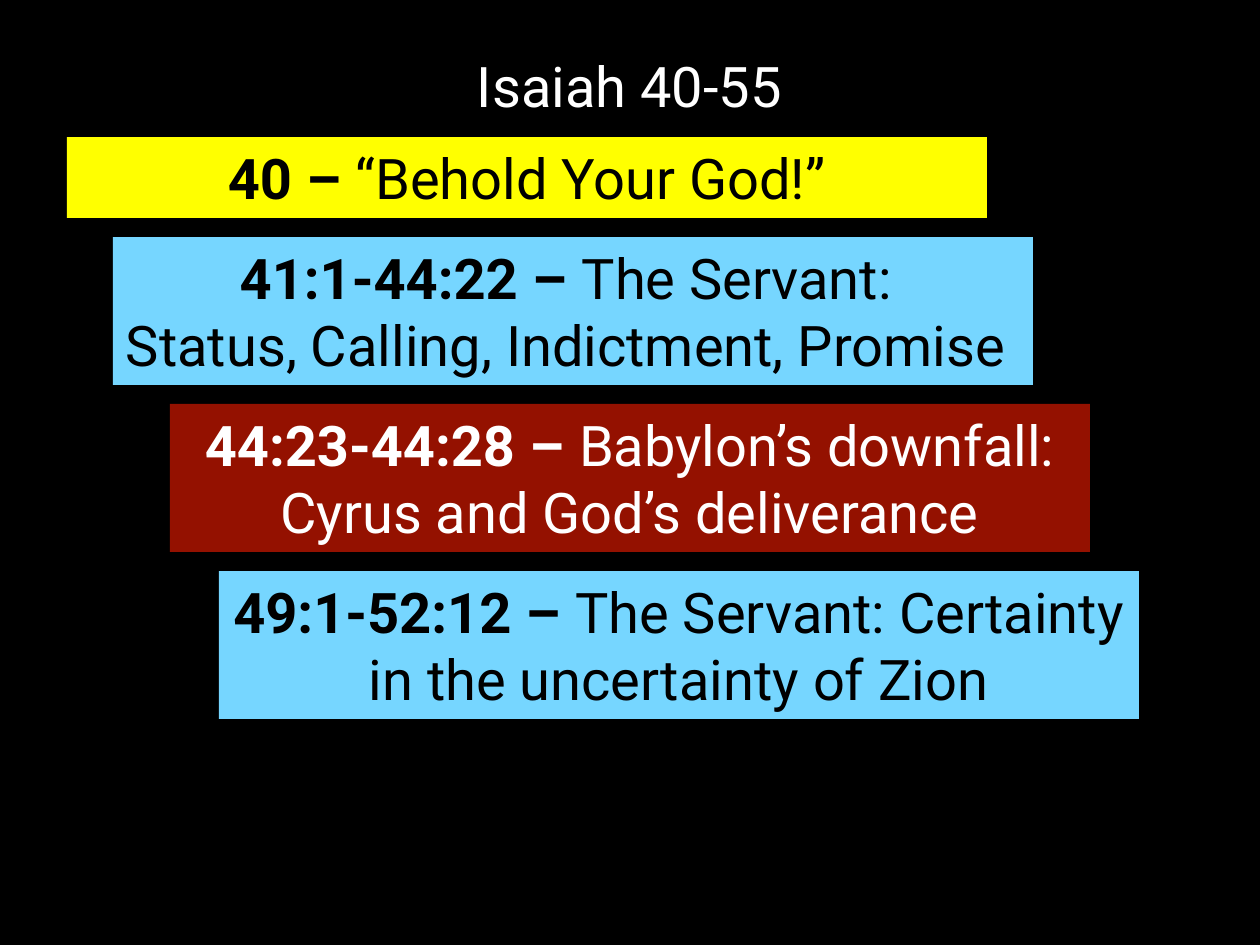
import pptx
import pptx.dml.color
import pptx.enum.shapes
import pptx.enum.text
import pptx.util

RGB = pptx.dml.color.RGBColor
BLACK = RGB(0x00, 0x00, 0x00)
WHITE = RGB(0xFF, 0xFF, 0xFF)
YELLOW = RGB(0xFF, 0xFF, 0x00)
BLUE = RGB(0x76, 0xD6, 0xFF)
RED = RGB(0x94, 0x11, 0x00)

SCALE = 914400 / 126  # EMU in one px
ANCHOR = pptx.enum.text.MSO_ANCHOR
FIT = pptx.enum.text.MSO_AUTO_SIZE


def emu(*sizes):
    return [pptx.util.Emu(round(size * SCALE)) for size in sizes]


class Deck:
    def __init__(self, wide, high):
        self.show = pptx.Presentation()
        self.show.slide_width, self.show.slide_height = emu(wide, high)
        self.font = {"name": "Roboto", "size": pptx.util.Pt(32)}

    def page(self, color):
        self.slide = self.show.slides.add_slide(self.show.slide_layouts[6])
        fill = self.slide.background.fill
        fill.solid()
        fill.fore_color.rgb = color

    def label(self, shape, lines, color, form):
        """Each line is a list of (text, bold) runs."""
        frame = shape.text_frame
        for key, value in form.items():
            setattr(frame, key, value)
        for num, runs in enumerate(lines):
            para = frame.add_paragraph() if num else frame.paragraphs[0]
            para.alignment = pptx.enum.text.PP_ALIGN.CENTER
            for text, bold in runs:
                run = para.add_run()
                run.text = text
                for key, value in {**self.font, "bold": bold}.items():
                    setattr(run.font, key, value)
                run.font.color.rgb = color

    def title(self, box, text, color):
        shape = self.slide.shapes.add_textbox(*emu(*box))
        form = {"word_wrap": True, "vertical_anchor": ANCHOR.MIDDLE}
        self.label(shape, [[(text, False)]], color, form)
        shape.text_frame.paragraphs[0].line_spacing = 0.9

    def bar(self, box, lines, fill, color):
        kind = pptx.enum.shapes.MSO_SHAPE.RECTANGLE
        shape = self.slide.shapes.add_shape(kind, *emu(*box))
        shape.shadow.inherit = False
        shape.fill.solid()
        shape.fill.fore_color.rgb = fill
        shape.line.fill.background()
        form = {"word_wrap": True, "vertical_anchor": ANCHOR.TOP,
                "auto_size": FIT.SHAPE_TO_FIT_TEXT}
        self.label(shape, lines, color, form)


# Left edge, height, fill, text colour, verses, lines of the theme
BARS = [
    (67, 81, YELLOW, BLACK, "40 – ", ["“Behold Your God!”"]),
    (113, 148, BLUE, BLACK, "41:1-44:22 – ",
     ["The Servant: ", "Status, Calling, Indictment, Promise "]),
    (170, 148, RED, WHITE, "44:23-44:28 – ",
     ["Babylon’s downfall: Cyrus and God’s deliverance"]),
    (219, 148, BLUE, BLACK, "49:1-52:12 – ",
     ["The Servant: Certainty in the uncertainty of Zion"]),
]
TOP, WIDTH, GAP = 137, 920, 19


def main():
    deck = Deck(1260, 945)
    deck.page(BLACK)

    # Heading
    deck.title((67, 50, 1125, 79), "Isaiah 40-55", WHITE)

    # Stepped bars, stacked with an equal gap
    top = TOP
    for left, high, fill, color, verse, (first, *rest) in BARS:
        lines = [[(verse, True), (first, False)]]
        lines += [[(text, False)] for text in rest]
        deck.bar((left, top, WIDTH, high), lines, fill, color)
        top += high + GAP

    deck.show.save("out.pptx")


if __name__ == "__main__":
    main()
